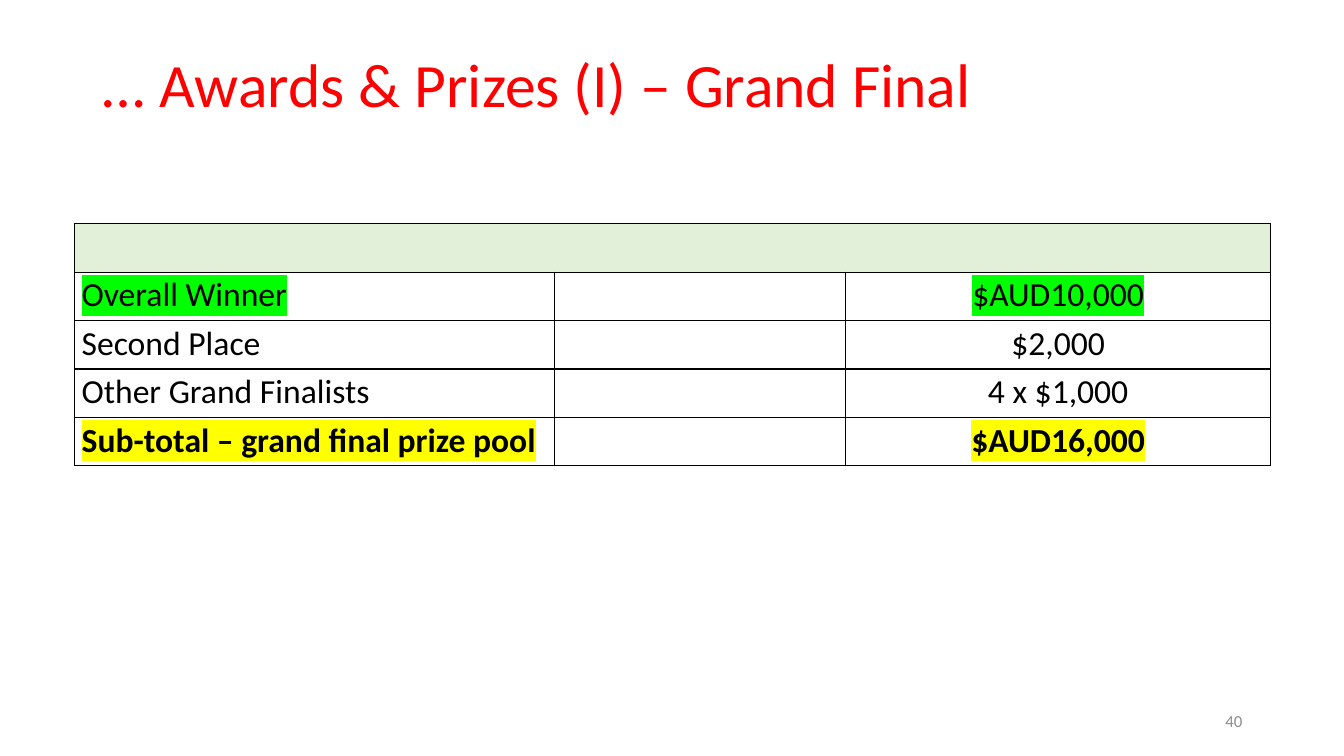
from dataclasses import dataclass

from lxml import etree
from pptx import Presentation
from pptx.dml.color import RGBColor
from pptx.enum.text import MSO_ANCHOR, MSO_AUTO_SIZE, PP_ALIGN
from pptx.oxml.ns import qn
from pptx.util import Emu, Pt

LEFT, CENTER, RIGHT, JUSTIFY = PP_ALIGN.LEFT, PP_ALIGN.CENTER, PP_ALIGN.RIGHT, PP_ALIGN.JUSTIFY
MIDDLE = MSO_ANCHOR.MIDDLE
NO_AUTOFIT = MSO_AUTO_SIZE.NONE

EMU_PER_PX = 9144  # 100 px to the inch
FONT = "Calibri"
BLACK, RED, GREY = "000000", "FF0000", "8C8C8C"
HEADER_GREEN, LIME, YELLOW = "E2EFD9", "00FF00", "FFFF00"
COLUMN_WIDTHS = (476, 289, 421)
ROW_HEIGHT = 48


@dataclass
class Award:
    name: str
    amount: str
    highlight: str = ""
    bold: bool = False


AWARDS = (
    Award("Overall Winner", "$AUD10,000", LIME),
    Award("Second Place", "$2,000"),
    Award("Other Grand Finalists", "4 x $1,000"),
    Award("Sub-total – grand final prize pool", "$AUD16,000", YELLOW, True),
)


def px(length: int) -> Emu:
    return Emu(length * EMU_PER_PX)


def rgb(color: str) -> RGBColor:
    return RGBColor.from_string(color)


def add_solid_fill(parent, color: str) -> None:
    fill = etree.SubElement(parent, qn("a:solidFill"))
    etree.SubElement(fill, qn("a:srgbClr"), val=color)


def format_paragraph(paragraph, size: int, color: str, align, bold: bool = False) -> None:
    paragraph.alignment = align
    for run in paragraph.runs:
        run.font.size = Pt(size)
        run.font.bold = bold
        run.font.color.rgb = rgb(color)
        run.font.name = FONT


def highlight_run(run, color: str) -> None:
    highlight = etree.Element(qn("a:highlight"))
    etree.SubElement(highlight, qn("a:srgbClr"), val=color)
    run.font._element.find(qn("a:solidFill")).addnext(highlight)


def add_borders(cell) -> None:
    properties = cell._tc.get_or_add_tcPr()
    for index, side in enumerate(("a:lnL", "a:lnR", "a:lnT", "a:lnB")):
        line = etree.Element(qn(side), w=str(Pt(1)))
        add_solid_fill(line, BLACK)
        properties.insert(index, line)


def fill_award_cell(cell, text: str, award: Award, align) -> None:
    cell.margin_left = cell.margin_right = px(7)
    cell.margin_top = cell.margin_bottom = 0
    cell.text_frame.text = text
    paragraph = cell.text_frame.paragraphs[0]
    paragraph.line_spacing = 1.07
    paragraph.space_after = Pt(8)
    format_paragraph(paragraph, 24, BLACK, align, award.bold)
    if award.highlight:
        highlight_run(paragraph.runs[0], award.highlight)


def add_title(slide) -> None:
    title = slide.shapes.title
    title.left, title.top, title.width, title.height = px(92), px(40), px(1150), px(94)
    frame = title.text_frame
    frame.text = "… Awards & Prizes (I) – Grand Final"
    frame.auto_size = NO_AUTOFIT
    frame.vertical_anchor = MIDDLE
    frame.paragraphs[0].line_spacing = 0.9
    format_paragraph(frame.paragraphs[0], 44, RED, LEFT)


def add_prize_table(slide) -> None:
    row_count = len(AWARDS) + 1
    table = slide.shapes.add_table(
        row_count, len(COLUMN_WIDTHS), px(74), px(222),
        px(sum(COLUMN_WIDTHS)), px(ROW_HEIGHT * row_count),
    ).table
    table.first_row = table.horz_banding = False
    for column, width in zip(table.columns, COLUMN_WIDTHS):
        column.width = px(width)
    for row in table.rows:
        row.height = px(ROW_HEIGHT)

    # Award names on the left, amounts on the right
    for row_index, award in enumerate(AWARDS, start=1):
        fill_award_cell(table.cell(row_index, 0), award.name, award, JUSTIFY)
        fill_award_cell(table.cell(row_index, 2), award.amount, award, CENTER)

    # Fills and borders
    for cell in table.iter_cells():
        cell.fill.background()
        add_borders(cell)

    # Header band across all columns
    header = table.cell(0, 0)
    header.merge(table.cell(0, len(COLUMN_WIDTHS) - 1))
    header.fill.solid()
    header.fill.fore_color.rgb = rgb(HEADER_GREEN)


def add_page_number(slide) -> None:
    frame = slide.shapes.add_textbox(px(942), px(695), px(300), px(40)).text_frame
    frame.word_wrap = True
    frame.vertical_anchor = MIDDLE
    frame.text = "40"
    format_paragraph(frame.paragraphs[0], 12, GREY, RIGHT)


def main() -> None:
    presentation = Presentation()
    presentation.slide_width, presentation.slide_height = px(1333), px(750)
    slide = presentation.slides.add_slide(presentation.slide_layouts.get_by_name("Title Only"))
    add_title(slide)
    add_prize_table(slide)
    add_page_number(slide)
    presentation.save("out.pptx")


if __name__ == "__main__":
    main()
